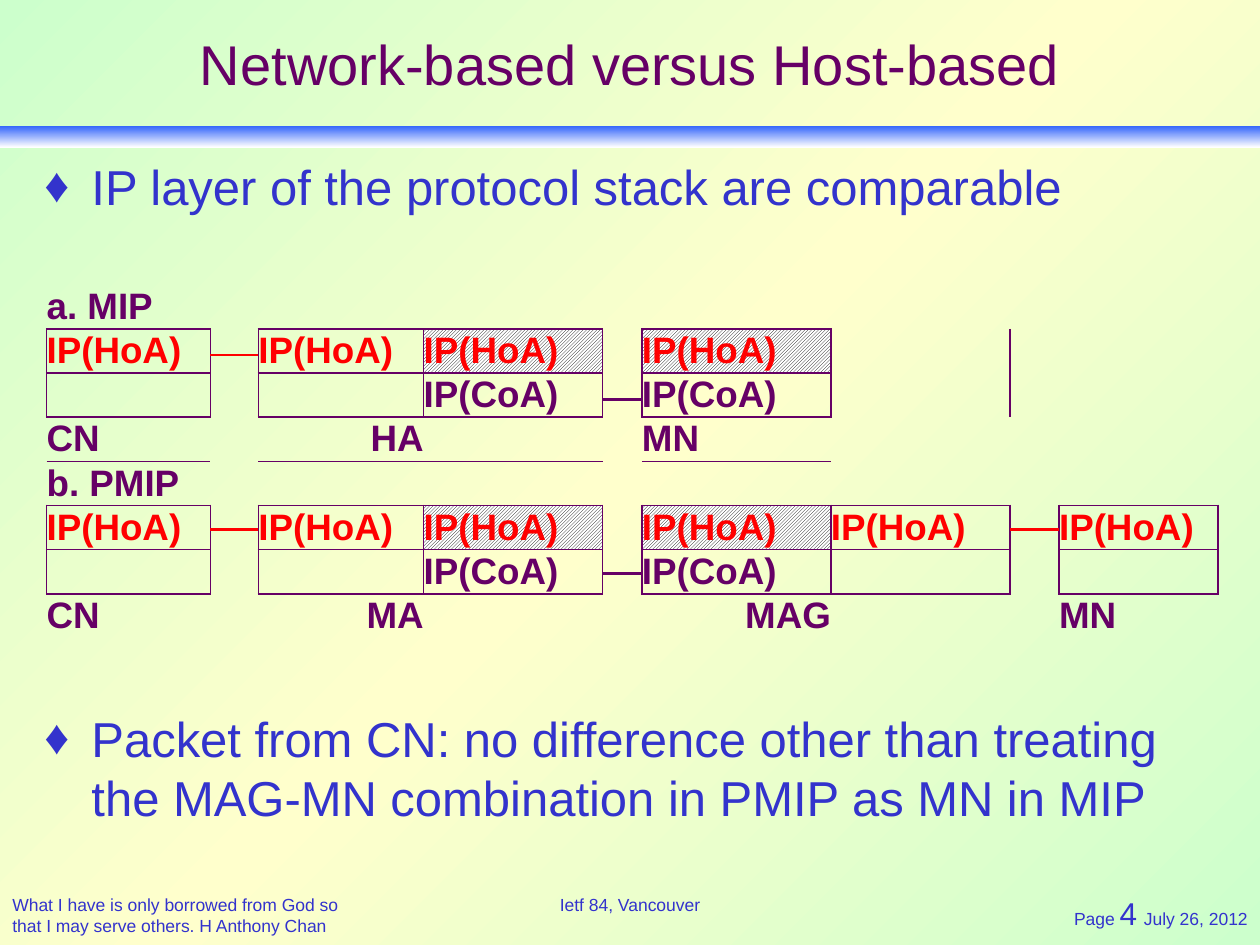
from dataclasses import dataclass

from lxml.etree import SubElement
from pptx import Presentation
from pptx.dml.color import RGBColor as RGB
from pptx.enum.dml import MSO_PATTERN
from pptx.enum.shapes import MSO_CONNECTOR as CONN, MSO_SHAPE as SHAPE
from pptx.enum.text import MSO_ANCHOR as ANCHOR, MSO_AUTO_SIZE as AUTO, PP_ALIGN as ALIGN
from pptx.oxml import parse_xml
from pptx.oxml.ns import nsdecls, qn
from pptx.util import Cm, Pt
from copy import deepcopy


@dataclass(frozen=True)
class Theme:
    font: str = "Arial"
    purple: str = "660066"
    blue: str = "3333CC"
    red: str = "FF0000"
    green_tint: str = "CCFFCC"
    yellow_tint: str = "FFFFCC"
    bar: str = "3365FB"
    white: str = "FFFFFF"
    black: str = "000000"
    title: float = 32
    body: float = 28
    cell: float = 21
    footer: float = 10


T = Theme()
NO_STYLE = "{2D5ABB26-0587-4C30-8999-92F81FD0307C}"

# Table grid, in cm
LEFT, TOP, ROW_H = 0.94, 5.74, 0.89
COLS = [3.3, 0.97, 3.33, 3.61, 0.79, 3.81, 3.61, 0.99, 3.2]
ROWS = 8

# Each stack: top row, columns of tall HoA boxes, columns of HoA-over-CoA boxes
STACKS = [(1, (0, 2), (3, 5)), (5, (0, 2, 6, 8), (3, 5))]
LABELS = [(0, 0, "a. MIP", ALIGN.LEFT), (3, 0, "CN", ALIGN.LEFT),
          (3, 2, "HA", ALIGN.RIGHT), (3, 5, "MN", ALIGN.LEFT),
          (4, 0, "b. PMIP", ALIGN.LEFT), (7, 0, "CN", ALIGN.LEFT),
          (7, 2, "MA", ALIGN.RIGHT), (7, 5, "MAG", ALIGN.RIGHT),
          (7, 8, "MN", ALIGN.LEFT)]
# Links: gap column, height in cm, colour
LINKS = [(1, 7.16, T.red), (4, 8.05, T.purple),
         (1, 10.67, T.red), (4, 11.56, T.purple), (7, 10.67, T.red)]


def format_run(r, size, color, bold=False):
    r.font.name, r.font.size, r.font.bold = T.font, Pt(size), bold
    r.font.color.rgb = RGB.from_string(color)


def fill_gradient(fill, element, colors, angle):
    fill.gradient()
    fill.gradient_angle = angle
    gs_list = element.xpath(".//a:gsLst")[0]
    while len(gs_list) < len(colors):
        gs_list.append(deepcopy(gs_list[0]))
    for i, (stop, color) in enumerate(zip(fill.gradient_stops, colors)):
        stop.position = i / (len(colors) - 1)
        stop.color.rgb = RGB.from_string(color)


def place(sp, x, y, w, h):
    sp.left, sp.top, sp.width, sp.height = Cm(x), Cm(y), Cm(w), Cm(h)


def add_bar(s):
    sp = s.shapes.add_shape(SHAPE.RECTANGLE, 0, Cm(2.54), Cm(25.4), Cm(0.43))
    sp.shadow.inherit = False
    sp.line.fill.background()
    fill_gradient(sp.fill, sp.element, [T.bar, T.white], 270)


def add_footer(s, x, w, h, align, parts):
    sp = s.shapes.add_textbox(Cm(x), Cm(17.9), Cm(w), Cm(h))
    tf = sp.text_frame
    tf.word_wrap = True
    p = tf.paragraphs[0]
    p.alignment = align
    for text, size in parts:
        r = p.add_run()
        r.text = text
        format_run(r, size, T.blue)


def set_title(s, text):
    sp = s.shapes.title
    place(sp, 0, 0, 25.4, 2.54)
    tf = sp.text_frame
    tf.text = text
    tf.auto_size, tf.vertical_anchor = AUTO.NONE, ANCHOR.MIDDLE
    p = tf.paragraphs[0]
    p.alignment = ALIGN.CENTER
    format_run(p.runs[0], T.title, T.purple)


def set_bullets(s, items):
    sp = s.placeholders[1]
    place(sp, 0.64, 3.02, 24.1, 14.88)
    tf = sp.text_frame
    tf.text = "\n".join(text for text, _ in items)
    tf.auto_size, tf.vertical_anchor = AUTO.NONE, ANCHOR.TOP
    for p, (_, gap) in zip(tf.paragraphs, items):
        p.space_before = Pt(gap)
        pPr = p._p.get_or_add_pPr()
        pPr.set("marL", str(Cm(0.95)))
        pPr.set("indent", str(Cm(-0.95)))
        SubElement(pPr, qn("a:buFont"), typeface=T.font)
        SubElement(pPr, qn("a:buChar"), char="♦")
        format_run(p.runs[0], T.body, T.blue)


def write_cell(cell, text, color, align=ALIGN.LEFT):
    cell.text = text
    p = cell.text_frame.paragraphs[0]
    p.alignment = align
    format_run(p.runs[0], T.cell, color, True)


def hatch(cell):
    cell.fill.patterned()
    cell.fill.pattern = MSO_PATTERN.LIGHT_UPWARD_DIAGONAL
    cell.fill.fore_color.rgb = RGB.from_string(T.black)
    cell.fill.back_color.rgb = RGB.from_string(T.white)


def outline(edges, row, col, height):
    """Collect the edges of a box, on its own cells and on its neighbours."""
    for y in range(row, row + height):
        edges |= {(y, col, "L"), (y, col, "R"), (y, col + 1, "L"), (y, col - 1, "R")}
    end = row + height
    edges |= {(row, col, "T"), (row - 1, col, "B"),
              (end - 1, col, "B"), (end, col, "T")}


def draw_edges(table, edges):
    for y, row in enumerate(table.rows):
        for x, cell in enumerate(row.cells):
            tcPr = cell._tc.get_or_add_tcPr()
            sides = [side for side in "LRTB" if (y, x, side) in edges]
            for i, side in enumerate(sides):
                tcPr.insert(i, parse_xml(
                    f'<a:ln{side} {nsdecls("a")} w="{Pt(1)}"><a:solidFill>'
                    f'<a:srgbClr val="{T.purple}"/></a:solidFill></a:ln{side}>'))


def add_stacks(s):
    table = s.shapes.add_table(ROWS, len(COLS), Cm(LEFT), Cm(TOP),
                               Cm(sum(COLS)), Cm(ROWS * ROW_H)).table
    table.first_row = table.horz_banding = False
    table._tbl.tblPr.find(qn("a:tableStyleId")).text = NO_STYLE
    for column, width in zip(table.columns, COLS):
        column.width = Cm(width)
    for row in table.rows:
        row.height = Cm(ROW_H)
    for cell in table.iter_cells():
        cell.margin_left = cell.margin_right = cell.margin_top = cell.margin_bottom = 0
        cell.vertical_anchor = ANCHOR.MIDDLE
        cell.fill.background()
    edges = set()
    for row, tall, split in STACKS:
        for col in tall + split:
            write_cell(table.cell(row, col), "IP(HoA)", T.red)
        for col in tall:
            outline(edges, row, col, 2)
        for col in split:
            hatch(table.cell(row, col))
            write_cell(table.cell(row + 1, col), "IP(CoA)", T.purple)
            outline(edges, row, col, 1)
            outline(edges, row + 1, col, 1)
    for row, col, text, align in LABELS:
        write_cell(table.cell(row, col), text, T.purple, align)
    draw_edges(table, edges)


def add_link(s, col, y, color):
    x = LEFT + sum(COLS[:col])
    line = s.shapes.add_connector(CONN.STRAIGHT, Cm(x + COLS[col]), Cm(y), Cm(x), Cm(y))
    line.line.width = Pt(1.5)
    line.line.color.rgb = RGB.from_string(color)
    SubElement(line.element.spPr, qn("a:effectLst"))


def main():
    prs = Presentation()
    prs.slide_width, prs.slide_height = Cm(25.4), Cm(19.05)
    s = prs.slides.add_slide(prs.slide_layouts[1])
    # Background and bar
    fill_gradient(s.background.fill, s.element,
                  [T.green_tint, T.yellow_tint, T.green_tint], 315)
    add_bar(s)
    # Footer
    small = T.footer
    add_footer(s, 0, 7.11, 1.09, ALIGN.LEFT, [
        ("What I have is only borrowed from God so that I may serve others. "
         "H Anthony Chan", small)])
    add_footer(s, 18.49, 6.91, 1.02, ALIGN.RIGHT, [
        ("Page ", small), ("4", 18), (" ", 14), ("July 26, 2012", small)])
    add_footer(s, 6.91, 11.58, 0.69, ALIGN.CENTER, [("Ietf 84, Vancouver", small)])
    # Protocol stacks and their links
    add_stacks(s)
    for link in LINKS:
        add_link(s, *link)
    # Title and bullets
    set_title(s, "Network-based versus Host-based")
    set_bullets(s, [
        ("IP layer of the protocol stack are comparable", 3),
        ("Packet from CN: no difference other than treating the MAG-MN "
         "combination in PMIP as MN in MIP", 282)])
    prs.save("out.pptx")


if __name__ == "__main__":
    main()
